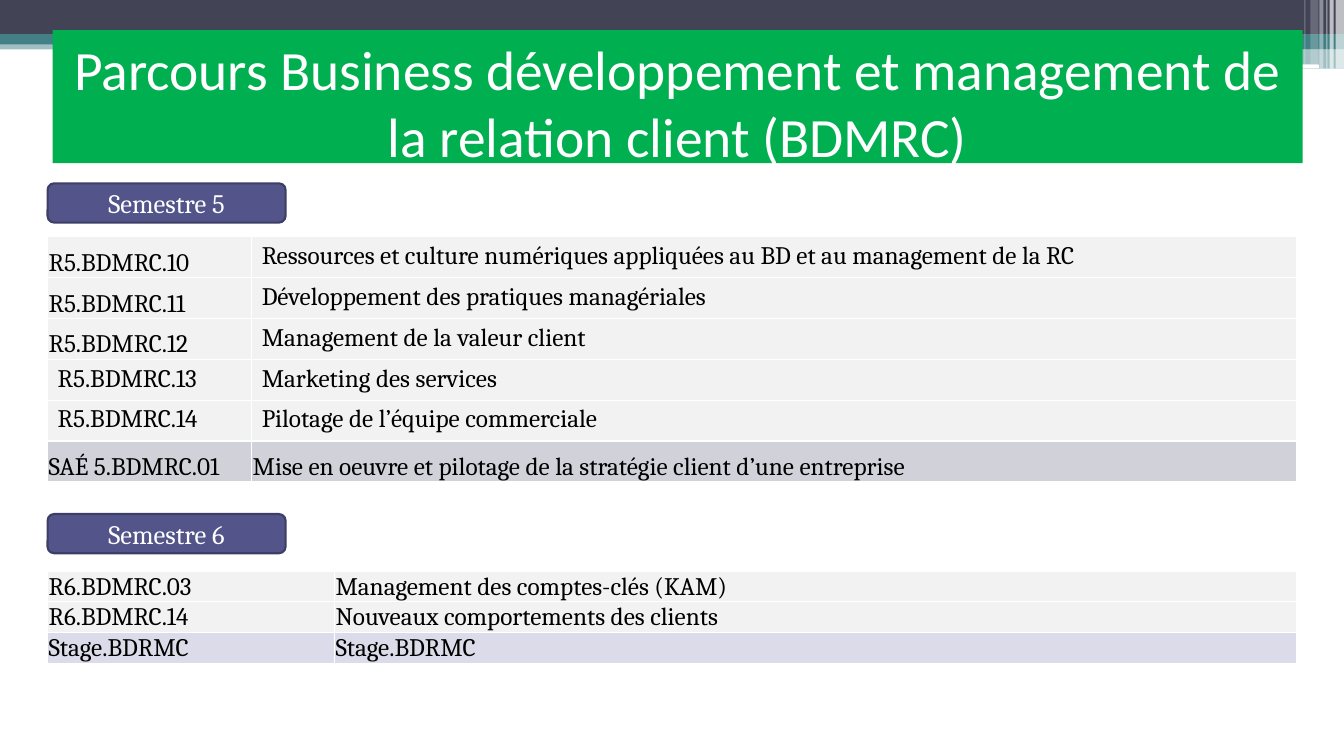
"""Builds the slide listing the BDMRC courses of semesters 5 and 6."""
from lxml import etree
from pptx import Presentation
from pptx.dml.color import RGBColor
from pptx.enum.shapes import MSO_SHAPE
from pptx.enum.text import MSO_ANCHOR, PP_ALIGN
from pptx.oxml.ns import qn
from pptx.util import Pt

RECT, ROUNDED = MSO_SHAPE.RECTANGLE, MSO_SHAPE.ROUNDED_RECTANGLE
TOP, MIDDLE, BOTTOM = MSO_ANCHOR.TOP, MSO_ANCHOR.MIDDLE, MSO_ANCHOR.BOTTOM
LEFT, CENTER = PP_ALIGN.LEFT, PP_ALIGN.CENTER

TITLE = "Parcours Business développement et management de la relation client (BDMRC)"
WHITE, TEAL, NAVY, GREY = "FFFFFF", "438086", "424456", "F2F2F2"
ROOMY = (7.2, 3.6, 7.2, 3.6)
TIGHT = (0.72, 0.72, 0.72, 0)

# (left, top, width, height, colour, opacity in percent)
BANDS = [
    (0, 28.8, 960, 6.5, TEAL, 50),
    (0, 0, 960, 24.5, NAVY, 100),
    (0, 24.5, 960, 7.2, TEAL, 100),
    (568, 28, 392, 7, TEAL, 100),
    (568, 34.6, 392, 14.4, TEAL, 50),
]
# (left, width, height, opacity in percent)
STRIPES = [
    (954, 6, 49, 65), (949.7, 2.9, 49, 65), (947.5, 0.7, 49, 60),
    (942.5, 2.9, 49, 40), (936, 5.8, 46, 20), (931.7, 0.7, 46, 30),
]
TABLE_LEFT, TABLE_WIDTH = 34, 892
COURSES = [
    ("R5.BDMRC.10", "Ressources et culture numériques appliquées au BD et au management de la RC"),
    ("R5.BDMRC.11", "Développement des pratiques managériales"),
    ("R5.BDMRC.12", "Management de la valeur client"),
    ("R5.BDMRC.13", "Marketing des services"),
    ("R5.BDMRC.14", "Pilotage de l’équipe commerciale"),
    ("SAÉ 5.BDMRC.01", "Mise en oeuvre et pilotage de la stratégie client d’une entreprise"),
]
COURSE_LAYOUT = [[(BOTTOM, TIGHT), (TOP, ROOMY)]] * 3 + [[(TOP, ROOMY)] * 2] * 2 + [[(BOTTOM, TIGHT)] * 2]
FINAL_COURSES = [
    ("R6.BDMRC.03", "Management des comptes-clés (KAM)"),
    ("R6.BDMRC.14", "Nouveaux comportements des clients"),
    ("Stage.BDRMC", "Stage.BDRMC"),
]
SEMESTERS = [
    dict(label="Semestre 5", label_top=131, top=169.2, code_width=145.8, row_height=29.17,
         rows=COURSES, layout=COURSE_LAYOUT, last_fill="D1D1DA"),
    dict(label="Semestre 6", label_top=367.2, top=407.8, code_width=205, row_height=22.1,
         rows=FINAL_COURSES, layout=[[(MIDDLE, TIGHT)] * 2] * 3, last_fill="DBDBE9"),
]


def paint(target, colour):
    target.solid()
    target.fore_color.rgb = RGBColor.from_string(colour)


def add_box(page, kind, left, top, width, height, colour, opacity=100, line=None):
    box = page.shapes.add_shape(kind, Pt(left), Pt(top), Pt(width), Pt(height))
    box.shadow.inherit = False
    paint(box.fill, colour)
    if opacity < 100:
        shade = box.fill._xPr.find(qn("a:solidFill"))[0]
        etree.SubElement(shade, qn("a:alpha"), val=str(opacity * 1000))
    if line:
        paint(box.line.fill, line)
        box.line.width = Pt(1.5)
    else:
        box.line.fill.background()
    return box


def write(frame, text, size=18, font="Cambria", colour="000000", align=LEFT):
    frame.word_wrap = True
    para = frame.paragraphs[0]
    para.alignment = align
    span = para.add_run()
    span.text = text
    span.font.size = Pt(size)
    span.font.name = font
    span.font.color.rgb = RGBColor.from_string(colour)


def set_borders(cell, colour, width):
    properties = cell._tc.get_or_add_tcPr()
    for index, side in enumerate(("a:lnL", "a:lnR", "a:lnT", "a:lnB")):
        edge = etree.Element(qn(side), w=str(Pt(width)))
        fill = etree.SubElement(edge, qn("a:solidFill"))
        etree.SubElement(fill, qn("a:srgbClr"), val=colour)
        properties.insert(index, edge)


def add_semester(page, label, label_top, top, code_width, row_height, rows, layout, last_fill):
    badge = add_box(page, ROUNDED, TABLE_LEFT, label_top, 170, 28, "53548A", line="3D3E66")
    badge.text_frame.vertical_anchor = MIDDLE
    write(badge.text_frame, label, size=19, colour=WHITE, align=CENTER)

    table = page.shapes.add_table(len(rows), 2, Pt(TABLE_LEFT), Pt(top), Pt(TABLE_WIDTH),
                                  Pt(row_height * len(rows))).table
    table.columns[0].width = Pt(code_width)
    table.columns[1].width = Pt(TABLE_WIDTH - code_width)
    for row, texts in enumerate(rows):
        table.rows[row].height = Pt(row_height)
        for column, text in enumerate(texts):
            cell = table.cell(row, column)
            anchor, margins = layout[row][column]
            cell.vertical_anchor = anchor
            cell.margin_left, cell.margin_top, cell.margin_right, cell.margin_bottom = map(Pt, margins)
            paint(cell.fill, last_fill if row == len(rows) - 1 else GREY)
            set_borders(cell, WHITE, 1)
            write(cell.text_frame, text)


def main():
    deck = Presentation()
    deck.slide_width, deck.slide_height = Pt(960), Pt(540)
    page = deck.slides.add_slide(deck.slide_layouts[6])
    paint(page.background.fill, WHITE)

    for left, top, width, height, colour, opacity in BANDS:
        add_box(page, RECT, left, top, width, height, colour, opacity)
    add_box(page, ROUNDED, 774, 46, 168, 2.9, WHITE)
    for left, width, height, opacity in STRIPES:
        add_box(page, RECT, left, 0, width, height, WHITE, opacity)

    banner = add_box(page, RECT, 37.5, 21.6, 893, 95, "00B050")
    banner.text_frame.vertical_anchor = TOP
    write(banner.text_frame, TITLE, size=39.6, font="Calibri", colour=WHITE, align=CENTER)

    for semester in SEMESTERS:
        add_semester(page, **semester)
    deck.save("out.pptx")


if __name__ == "__main__":
    main()
